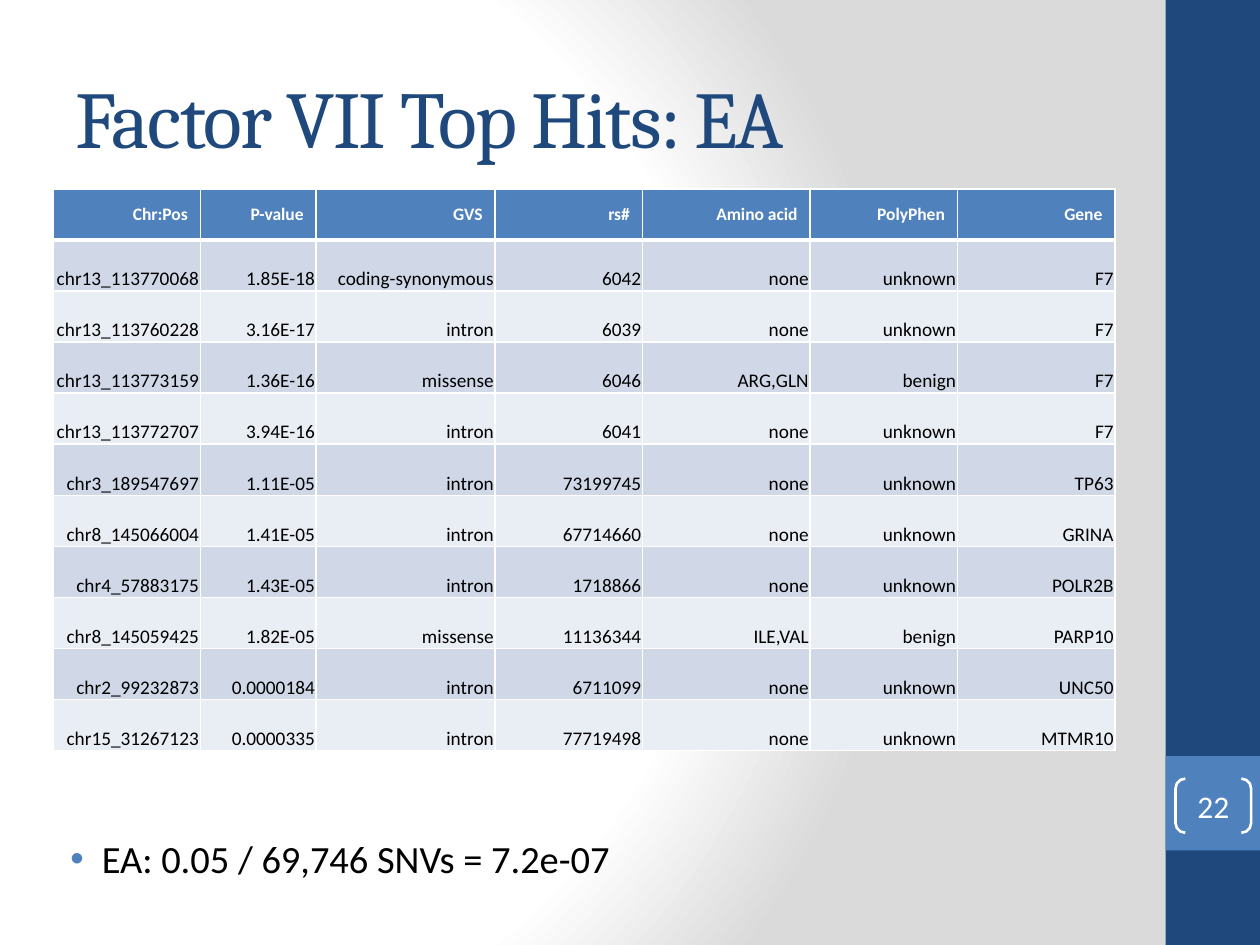
from dataclasses import dataclass

from lxml.etree import SubElement
from pptx import Presentation
from pptx.dml.color import RGBColor
from pptx.enum.shapes import MSO_SHAPE
from pptx.enum.text import MSO_ANCHOR, PP_ALIGN
from pptx.oxml import parse_xml
from pptx.oxml.ns import nsdecls, qn
from pptx.util import Inches, Pt


@dataclass(frozen=True)
class Theme:
    navy: str = "1F497D"
    blue: str = "4F81BD"
    white: str = "FFFFFF"
    black: str = "000000"
    gray: str = "DADADA"
    bands: tuple = ("D0D8E8", "E9EDF4")
    serif: str = "Cambria"
    sans: str = "Calibri"
    title: float = 46
    note: float = 22
    page: float = 18
    head: float = 10
    cell: float = 11


THEME = Theme()
WIDTHS = (1.17, 0.92, 1.42, 1.17, 1.33, 1.17, 1.25)
HEADS = ("Chr:Pos", "P-value", "GVS", "rs#", "Amino acid", "PolyPhen", "Gene")
HITS = (
    ("chr13_113770068", "1.85E-18", "coding-synonymous", "6042", "none", "unknown", "F7"),
    ("chr13_113760228", "3.16E-17", "intron", "6039", "none", "unknown", "F7"),
    ("chr13_113773159", "1.36E-16", "missense", "6046", "ARG,GLN", "benign", "F7"),
    ("chr13_113772707", "3.94E-16", "intron", "6041", "none", "unknown", "F7"),
    ("chr3_189547697", "1.11E-05", "intron", "73199745", "none", "unknown", "TP63"),
    ("chr8_145066004", "1.41E-05", "intron", "67714660", "none", "unknown", "GRINA"),
    ("chr4_57883175", "1.43E-05", "intron", "1718866", "none", "unknown", "POLR2B"),
    ("chr8_145059425", "1.82E-05", "missense", "11136344", "ILE,VAL", "benign", "PARP10"),
    ("chr2_99232873", "0.0000184", "intron", "6711099", "none", "unknown", "UNC50"),
    ("chr15_31267123", "0.0000335", "intron", "77719498", "none", "unknown", "MTMR10"),
)


def paint(fill, color):
    fill.solid()
    fill.fore_color.rgb = RGBColor.from_string(color)


def write(frame, text, size, color, face=THEME.sans, bold=False, align=PP_ALIGN.LEFT):
    para = frame.paragraphs[0]
    para.alignment = align
    run = para.add_run()
    run.text = text
    run.font.size = Pt(size)
    run.font.name = face
    run.font.bold = bold
    run.font.color.rgb = RGBColor.from_string(color)
    return para


def add_back(slide):
    slide.background.fill.solid()
    solid = next(slide.element.iter(qn("a:solidFill")))
    stops = "".join(
        f'<a:gs pos="{pos * 1000}"><a:srgbClr val="{color}"/></a:gs>'
        for pos, color in ((0, THEME.white), (75, THEME.white), (100, THEME.gray))
    )
    blend = parse_xml(
        f'<a:gradFill {nsdecls("a")} rotWithShape="1"><a:gsLst>{stops}</a:gsLst>'
        '<a:path path="circle"><a:fillToRect l="20000" t="50000" r="100000" b="50000"/>'
        "</a:path></a:gradFill>"
    )
    solid.getparent().replace(solid, blend)


def add_block(slide, box, color):
    shape = slide.shapes.add_shape(MSO_SHAPE.RECTANGLE, *map(Inches, box))
    shape.shadow.inherit = False
    paint(shape.fill, color)
    shape.line.fill.background()


def add_text(slide, box, anchor):
    frame = slide.shapes.add_textbox(*map(Inches, box)).text_frame
    frame.word_wrap = True
    frame.vertical_anchor = anchor
    return frame


def add_title(slide, text):
    frame = add_text(slide, (0.5, 0.3, 8.33, 1.25), MSO_ANCHOR.MIDDLE)
    para = write(frame, text, THEME.title, THEME.navy, THEME.serif)
    para.runs[0].font._element.set("spc", "-100")


def add_note(slide, text):
    frame = add_text(slide, (0.33, 6.58, 8.33, 0.58), MSO_ANCHOR.TOP)
    para = write(frame, text, THEME.note, THEME.black)
    para.space_before = Pt(THEME.note * 0.2)
    props = para._p.get_or_add_pPr()
    props.set("marL", str(Inches(0.38)))
    props.set("indent", str(Inches(-0.25)))
    tint = SubElement(props, qn("a:buClr"))
    SubElement(tint, qn("a:srgbClr"), val=THEME.blue)
    SubElement(props, qn("a:buFont"), typeface="Arial")
    SubElement(props, qn("a:buChar"), char="•")


def add_page(slide, text):
    box = map(Inches, (9.33, 6.18, 0.6, 0.43))
    shape = slide.shapes.add_shape(MSO_SHAPE.DOUBLE_BRACKET, *box)
    shape.shadow.inherit = False
    shape.adjustments[0] = 0.18
    shape.fill.background()
    paint(shape.line.fill, THEME.white)
    shape.line.width = Pt(1.5)
    frame = shape.text_frame
    frame.margin_left = frame.margin_right = frame.margin_top = frame.margin_bottom = 0
    frame.vertical_anchor = MSO_ANCHOR.MIDDLE
    write(frame, text, THEME.page, THEME.white, align=PP_ALIGN.CENTER)


def rule_cell(cell, top, base):
    props = cell._tc.get_or_add_tcPr()
    for spot, (side, width) in enumerate(zip("LRTB", (1, 1, top, base))):
        props.insert(spot, parse_xml(
            f'<a:ln{side} {nsdecls("a")} w="{Pt(width)}"><a:solidFill>'
            f'<a:srgbClr val="{THEME.white}"/></a:solidFill></a:ln{side}>'
        ))


def fill_head(cell, text):
    paint(cell.fill, THEME.blue)
    cell.vertical_anchor = MSO_ANCHOR.MIDDLE
    write(cell.text_frame, text, THEME.head, THEME.white, bold=True, align=PP_ALIGN.RIGHT)
    rule_cell(cell, 1, 3)


def fill_hit(cell, text, row):
    paint(cell.fill, THEME.bands[row % 2])
    cell.vertical_anchor = MSO_ANCHOR.BOTTOM
    cell.margin_left = cell.margin_right = cell.margin_top = Inches(0.01)
    cell.margin_bottom = 0
    write(cell.text_frame, text, THEME.cell, THEME.black, align=PP_ALIGN.RIGHT)
    rule_cell(cell, 1 if row else 3, 1)


def add_hits(slide):
    box = map(Inches, (0.42, 1.5, sum(WIDTHS), 4.46))
    table = slide.shapes.add_table(len(HITS) + 1, len(HEADS), *box).table
    for col, (width, head) in enumerate(zip(WIDTHS, HEADS)):
        table.columns[col].width = Inches(width)
        fill_head(table.cell(0, col), head)
    for row, hit in enumerate(HITS):
        for col, text in enumerate(hit):
            fill_hit(table.cell(row + 1, col), text, row)


def main():
    deck = Presentation()
    deck.slide_width, deck.slide_height = Inches(10), Inches(7.5)
    slide = deck.slides.add_slide(deck.slide_layouts[6])
    add_back(slide)
    add_block(slide, (9.25, 0, 0.75, 7.5), THEME.navy)
    add_block(slide, (9.25, 6, 0.75, 0.75), THEME.blue)
    add_title(slide, "Factor VII Top Hits: EA")
    add_page(slide, "22")
    add_note(slide, "EA: 0.05 / 69,746 SNVs = 7.2e-07")
    add_hits(slide)
    deck.save("out.pptx")


if __name__ == "__main__":
    main()
